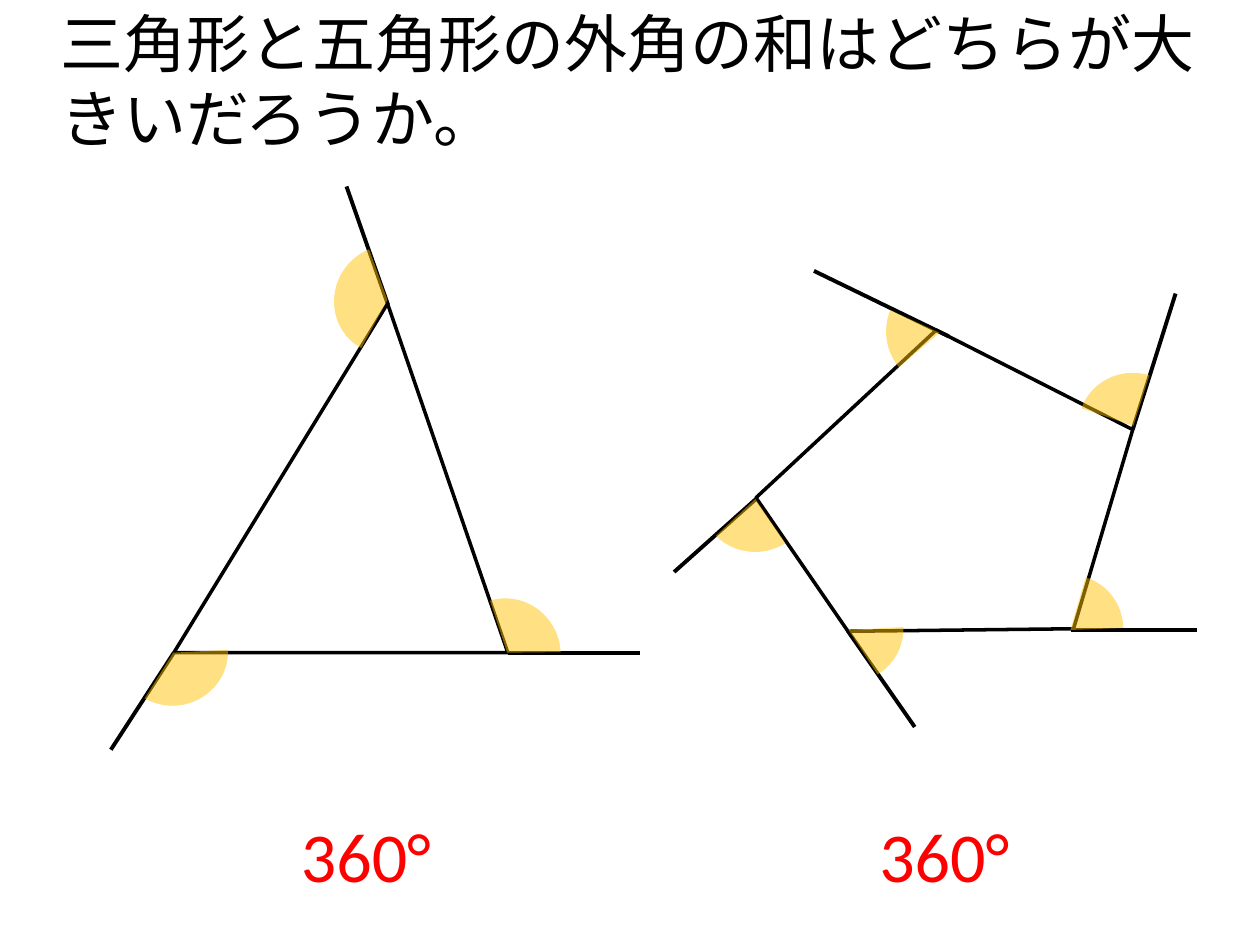
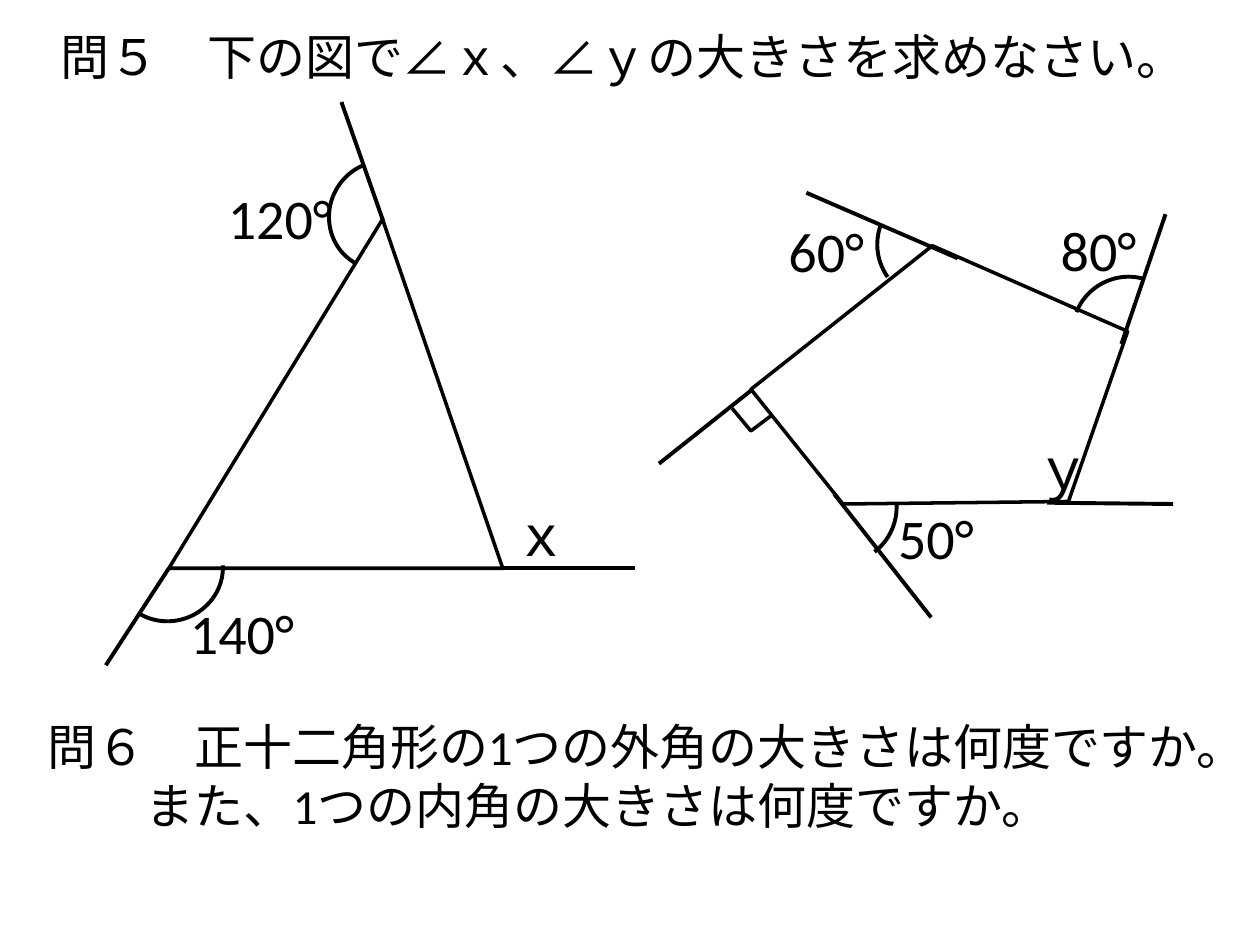
from lxml import etree
from pptx import Presentation
from pptx import util as u
from pptx.dml.color import RGBColor
from pptx.enum import lang, shapes, text
from pptx.oxml import ns

BLACK, RED, GOLD = "000000", "FF0000", "FFC000"
FONT = "Calibri"
TITLE_ONLY = 5
EDGE, RAY = 2, 2.25
ARC_SIZE = (0.87, 0.84)
TRIANGLE_RAYS = [
    ((1.37, -0.93), (1.7, 0.01)),
    ((2.65, 2.77), (3.7, 2.77)),
    ((-0.5, 3.54), (0, 2.77)),
]
TOP_ARC = (1.26, -0.45, 298.6, 107.92, 186.89)
LEFT_ARC = (-0.44, 2.35, 166.4, 114.35, 189.38)
RIGHT_ARC = (2.21, 2.35, 56, 117.48, 182.06)


def color(value):
    """Turn a hex string into a colour."""
    return RGBColor.from_string(value)


def inches(*values):
    """Turn plain numbers into lengths."""
    return [u.Inches(value) for value in values]


def shifted(point, origin):
    """Move a point by an origin."""
    return point[0] + origin[0], point[1] + origin[1]


class Worksheet:
    """Hold the deck, its style and the current page."""

    def __init__(self):
        """Open an empty deck."""
        self.deck = Presentation()
        self.deck.slide_width, self.deck.slide_height = inches(10, 7.5)
        self.page = None

    def add_page(self, title, top, height, size):
        """Start a page with its title."""
        layout = self.deck.slide_layouts[TITLE_ONLY]
        self.page = self.deck.slides.add_slide(layout)
        box = self.page.shapes.title
        box.left, box.top, box.width, box.height = inches(0.38, top, 9.37, height)
        self.fill_text(box, [title], size, anchor=text.MSO_ANCHOR.MIDDLE)

    def fill_text(self, box, lines, size, ink=BLACK, anchor=text.MSO_ANCHOR.TOP):
        """Fill a box with left-aligned paragraphs."""
        frame = box.text_frame
        frame.word_wrap = True
        frame.auto_size = text.MSO_AUTO_SIZE.NONE
        frame.vertical_anchor = anchor
        for index, line in enumerate(lines):
            para = frame.add_paragraph() if index else frame.paragraphs[0]
            para.alignment = text.PP_ALIGN.LEFT
            span = para.add_run()
            span.text = line
            span.font.name = FONT
            span.font.size = u.Pt(size)
            span.font.color.rgb = color(ink)
            span.font.language_id = lang.MSO_LANGUAGE_ID.JAPANESE

    def label(self, lines, left, top, width, height=0.64, size=32, **style):
        """Add a text box."""
        box = self.page.shapes.add_textbox(*inches(left, top, width, height))
        self.fill_text(box, lines, size, **style)
        return box

    def outline(self, shape):
        """Give a shape a plain black edge."""
        shape.shadow.inherit = False
        shape.fill.background()
        shape.line.color.rgb = color(BLACK)
        shape.line.width = u.Pt(EDGE)

    def ray(self, start, end):
        """Draw a straight line."""
        line = self.page.shapes.add_connector(
            shapes.MSO_CONNECTOR.STRAIGHT, *inches(*start, *end))
        line.line.color.rgb = color(BLACK)
        line.line.width = u.Pt(RAY)
        etree.SubElement(line._element.spPr, ns.qn("a:effectLst"))

    def polyline(self, points, close):
        """Draw an outline through the points."""
        corners = [inches(*point) for point in points]
        builder = self.page.shapes.build_freeform(*corners[0])
        builder.add_line_segments(corners[1:], close=close)
        self.outline(builder.convert_to_shape())

    def triangle(self, origin):
        """Draw the triangle with its extended sides."""
        shape = self.page.shapes.add_shape(
            shapes.MSO_SHAPE.ISOSCELES_TRIANGLE, *inches(*origin, 2.65, 2.77))
        shape.adjustments[0] = 0.64
        self.outline(shape)
        for start, end in TRIANGLE_RAYS:
            self.ray(shifted(start, origin), shifted(end, origin))

    def pentagon(self, corners, rays):
        """Draw a pentagon with its extended sides."""
        self.polyline(corners, close=True)
        for start, end in rays:
            self.ray(start, end)

    def angle(self, left, top, turn, start, end, filled=False, origin=(0, 0)):
        """Mark an exterior angle with an arc."""
        place = shifted((left, top), origin)
        arc = self.page.shapes.add_shape(
            shapes.MSO_SHAPE.ARC, *inches(*place, *ARC_SIZE))
        arc.adjustments[0], arc.adjustments[1] = start, end
        arc.rotation = turn
        self.outline(arc)
        arc.line.width = u.Pt(RAY)
        if filled:
            arc.line.fill.background()
            arc.fill.solid()
            arc.fill.fore_color.rgb = color(GOLD)
            tint = arc._element.spPr.find(ns.qn("a:solidFill"))[0]
            etree.SubElement(tint, ns.qn("a:alpha"), val="49000")


def add_comparison(sheet):
    """Compare the exterior angle sums of two polygons."""
    sheet.add_page("三角形と五角形の外角の和はどちらが大きいだろうか。", 0.13, 1.01, 36)
    origin = (1.38, 2.41)
    sheet.triangle(origin)
    sheet.pentagon(
        [(7.43, 2.62), (6, 3.95), (6.73, 5.01), (8.52, 4.99), (8.99, 3.41)],
        [((9.33, 2.33), (8.99, 3.41)),
         ((8.5, 5), (9.5, 5)),
         ((6.73, 5.01), (7.26, 5.77)),
         ((5.35, 4.54), (6, 3.96)),
         ((6.46, 2.15), (7.53, 2.67))])
    for arc in (TOP_ARC, LEFT_ARC, RIGHT_ARC):
        sheet.angle(*arc, filled=True, origin=origin)
    for arc in (
        (6.3, 4.58, 166.4, 114.35, 150.3),
        (8.06, 4.58, 95.6, 114.35, 157.34),
        (8.56, 2.96, 8.1, 114.35, 167.71),
        (7.02, 2.22, 249.6, 149.88, 189.07),
        (5.56, 3.54, 176.8, 143.43, 192.12),
    ):
        sheet.angle(*arc, filled=True)
    for left in (2.29, 6.88):
        sheet.label(["360°"], left, 6.4, 1.61, 0.77, 40, ink=RED)


def add_exercises(sheet):
    """Ask for unknown exterior angles."""
    sheet.add_page("問５　下の図で∠ｘ、∠ｙの大きさを求めなさい。", 0.01, 0.87, 28)
    origin = (1.34, 1.74)
    sheet.triangle(origin)
    sheet.pentagon(
        [(7.4, 1.95), (5.96, 3.09), (6.69, 4), (8.48, 3.98), (8.95, 2.63)],
        [((9.25, 1.7), (8.9, 2.73)),
         ((8.31, 3.99), (9.31, 4)),
         ((6.62, 3.92), (7.39, 4.9)),
         ((5.23, 3.68), (5.96, 3.1)),
         ((6.4, 1.53), (7.6, 2.05))])
    for arc in (TOP_ARC, LEFT_ARC):
        sheet.angle(*arc, origin=origin)
    for arc in (
        (6.95, 1.53, 247, 154.14, 189.38),
        (6.26, 3.61, 99.4, 154.14, 189.38),
        (8.51, 2.2, 330.6, 137.4, 189.38),
    ):
        sheet.angle(*arc)
    sheet.polyline([(5.81, 3.24), (5.96, 3.42), (6.12, 3.3)], close=False)
    for name, left, top, width in (
        ("120°", 1.71, 1.41, 1.33),
        ("140°", 1.41, 4.7, 1.33),
        ("ｘ", 3.98, 3.92, 0.86),
        ("ｙ", 8.12, 3.39, 0.65),
        ("50°", 7.03, 3.95, 1.33),
        ("60°", 6.16, 1.67, 1.33),
        ("80°", 8.32, 1.66, 1.33),
    ):
        sheet.label([name], left, top, width)
    question = sheet.label(
        ["問６　正十二角形の1つの外角の大きさは何度ですか。",
         "また、1つの内角の大きさは何度ですか。"],
        0.28, 5.72, 9.37, 0.87, 28, anchor=text.MSO_ANCHOR.MIDDLE)
    follow_up = question.text_frame.paragraphs[1]
    follow_up._p.get_or_add_pPr().set("marL", str(u.Inches(0.78)))


def main():
    """Build and save the deck."""
    sheet = Worksheet()
    add_comparison(sheet)
    add_exercises(sheet)
    sheet.deck.save("out.pptx")


if __name__ == "__main__":
    main()
